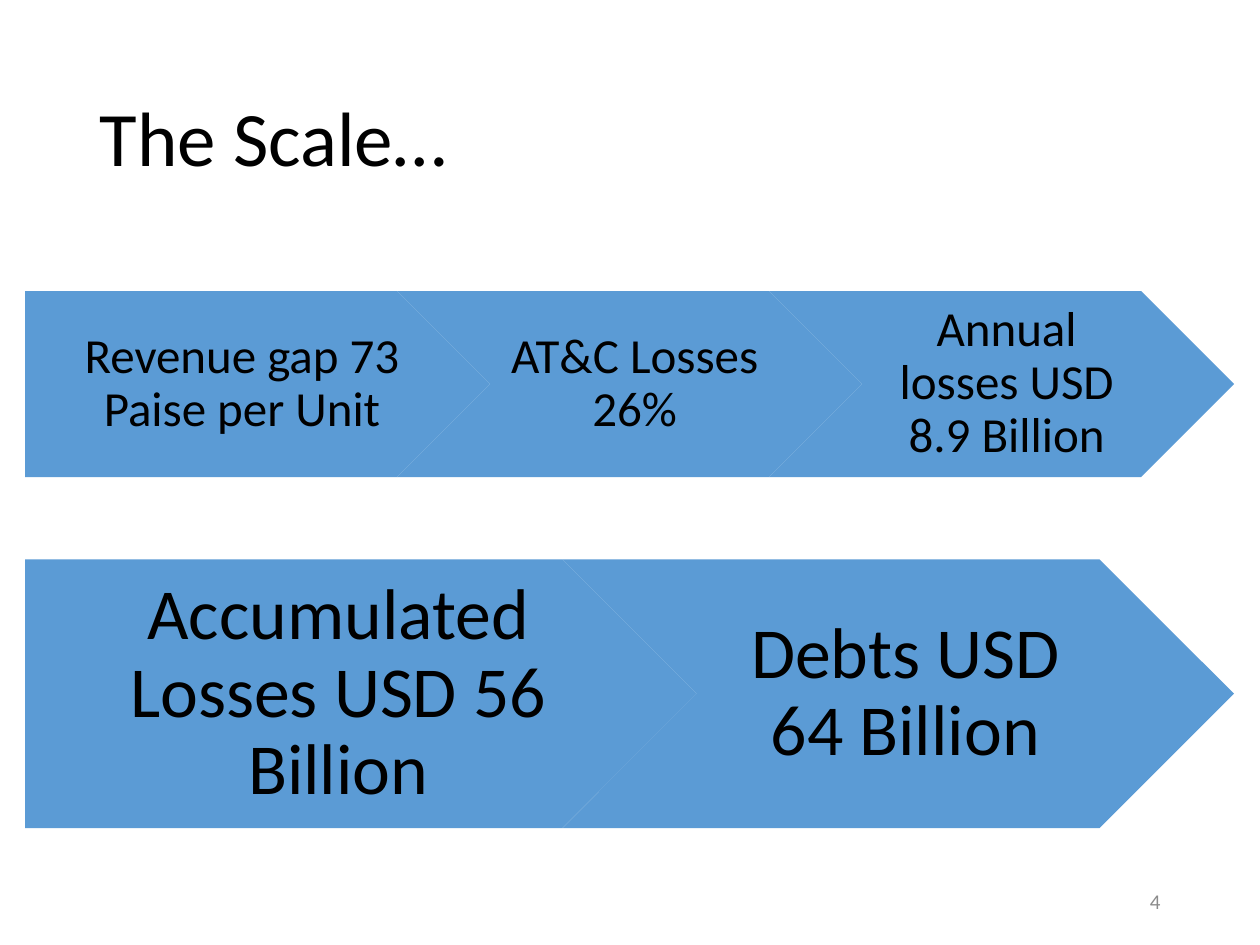
from pptx import Presentation
from pptx.dml.color import RGBColor
from pptx.enum.shapes import MSO_SHAPE
from pptx.enum.text import MSO_ANCHOR, MSO_AUTO_SIZE, PP_ALIGN
from pptx.util import Inches, Pt

COLORS = {"arrow": "5B9BD5", "text": "000000", "number": "8C8C8C"}
FONT = "Calibri"


class SlideBuilder:
    def __init__(self, prs):
        self.s = prs.slides.add_slide(prs.slide_layouts[5])

    def set_text(self, sp, text, size, color, align, spacing=1.0):
        tf = sp.text_frame
        tf.text = text
        tf.word_wrap = True
        tf.auto_size = MSO_AUTO_SIZE.NONE
        tf.vertical_anchor = MSO_ANCHOR.MIDDLE
        p = tf.paragraphs[0]
        p.alignment = align
        p.line_spacing = spacing
        font = p.runs[0].font
        font.name = FONT
        font.size = Pt(size)
        font.color.rgb = RGBColor.from_string(COLORS[color])
        return tf

    def title(self, text, left, top, width, height):
        sp = self.s.shapes.title
        sp.left, sp.top = Inches(left), Inches(top)
        sp.width, sp.height = Inches(width), Inches(height)
        self.set_text(sp, text, 44, "text", PP_ALIGN.LEFT, 0.9)

    def page_number(self, text, left, top, width, height):
        sp = self.s.shapes.add_textbox(Inches(left), Inches(top), Inches(width), Inches(height))
        self.set_text(sp, text, 12, "number", PP_ALIGN.RIGHT)

    def process_row(self, labels, left, top, width, size):
        """Interlocking arrows: each is 0.4 widths high and starts 0.8 widths after the last."""
        group = self.s.shapes.add_group_shape()
        pad = size / 700
        for i, label in enumerate(labels):
            kind = MSO_SHAPE.CHEVRON if i else MSO_SHAPE.PENTAGON
            sp = group.shapes.add_shape(kind, Inches(left + 0.8 * width * i), Inches(top),
                                        Inches(width), Inches(0.4 * width))
            sp.adjustments[0] = 0.5
            sp.shadow.inherit = False
            sp.fill.solid()
            sp.fill.fore_color.rgb = RGBColor.from_string(COLORS["arrow"])
            sp.line.fill.background()
            tf = self.set_text(sp, label, size, "text", PP_ALIGN.CENTER, 0.9)
            tf.margin_left = Inches(pad * (3 if i else 4))
            tf.margin_right = Inches(pad)
            tf.margin_top = tf.margin_bottom = Inches(2 * pad)


def main():
    prs = Presentation()
    prs.slide_width, prs.slide_height = Inches(10), Inches(7.5)
    slide = SlideBuilder(prs)
    slide.title("The Scale…", 0.69, 0.4, 8.62, 1.45)
    slide.process_row(["Accumulated Losses USD 56 Billion", "Debts USD 64 Billion"],
                      0.2, 4.44, 5.33, 41)
    slide.process_row(["Revenue gap 73 Paise per Unit", "AT&C Losses 26%",
                       "Annual losses USD 8.9 Billion"], 0.2, 2.31, 3.69, 28)
    slide.page_number("4", 7.06, 6.95, 2.25, 0.4)
    prs.save("out.pptx")


if __name__ == "__main__":
    main()
